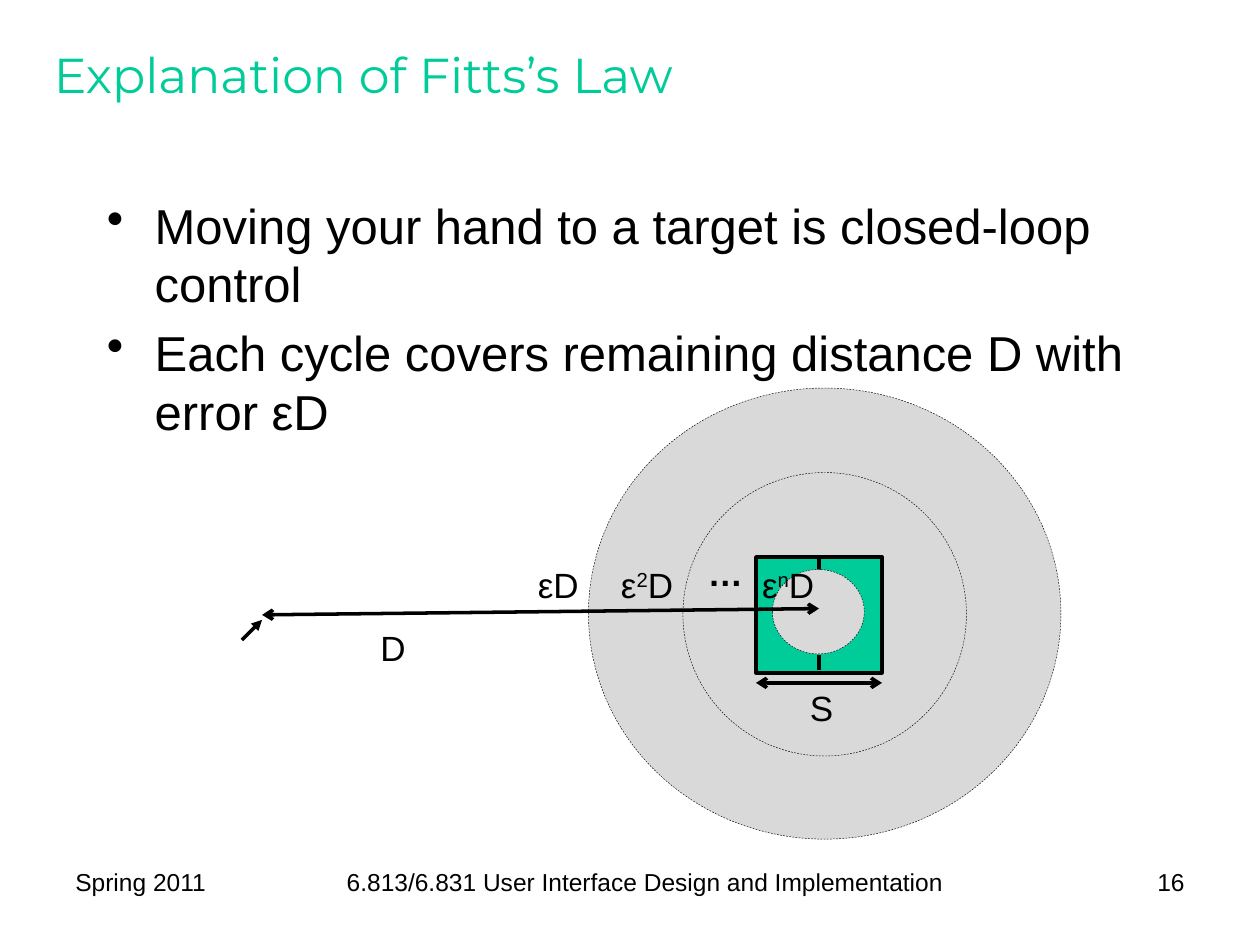
from collections import namedtuple

from lxml import etree
from pptx import Presentation
from pptx.dml.color import RGBColor
from pptx.enum.dml import MSO_LINE
from pptx.enum.shapes import MSO_CONNECTOR, MSO_SHAPE
from pptx.enum.text import MSO_ANCHOR, PP_ALIGN
from pptx.oxml.ns import qn
from pptx.util import Inches, Pt

BLACK, GREEN, GRAY = "000000", "00CC99", "D9D9D9"
Box = namedtuple("Box", "left top width height")


def rgb(color):
    """Turn a hex string into a colour."""
    return RGBColor.from_string(color)


def inside(box, left, top, width, height):
    """Return a box whose offset is measured from another box."""
    return Box(box.left + left, box.top + top, width, height)


def add_text(slide, box, paragraphs, size, color=BLACK, font="Arial",
             align=PP_ALIGN.LEFT, wrap=True, bold=False):
    """Add a text box, where each paragraph is a list of (text, raised) runs."""
    frame = slide.shapes.add_textbox(*map(Inches, box)).text_frame
    frame.word_wrap = wrap
    for index, runs in enumerate(paragraphs):
        paragraph = frame.paragraphs[0] if index == 0 else frame.add_paragraph()
        paragraph.alignment = align
        paragraph.font.name = font
        paragraph.font.size = Pt(size)
        paragraph.font.bold = bold
        paragraph.font.color.rgb = rgb(color)
        for text, raised in runs:
            run = paragraph.add_run()
            run.text = text
            if raised:
                run.font._element.set("baseline", "30000")
    return frame


def add_figure(slide, kind, box, fill, width, dash=None):
    """Add a filled preset shape with a black outline."""
    shape = slide.shapes.add_shape(kind, *map(Inches, box))
    shape.shadow.inherit = False
    shape.fill.solid()
    shape.fill.fore_color.rgb = rgb(fill)
    shape.line.color.rgb = rgb(BLACK)
    shape.line.width = Pt(width)
    shape.line.dash_style = dash


def add_line(slide, box, start, end, head=None, tail=None, dash=None):
    """Add a black line between two points of a box, with optional arrowheads."""
    points = [Inches(origin + offset) for point in (start, end)
              for origin, offset in zip((box.left, box.top), point)]
    connector = slide.shapes.add_connector(MSO_CONNECTOR.STRAIGHT, *points)
    connector.line.color.rgb = rgb(BLACK)
    connector.line.width = Pt(2)
    connector.line.dash_style = dash
    outline = connector.line._get_or_add_ln()
    for name, arrow in (("a:headEnd", head), ("a:tailEnd", tail)):
        if arrow:
            etree.SubElement(outline, qn(name), type=arrow)
    etree.SubElement(connector._element.spPr, qn("a:effectLst"))


def add_title(slide, box):
    """Add the slide title."""
    frame = add_text(slide, box, [[("Explanation of Fitts’s Law", False)]], 28, GREEN, "Montserrat")
    frame.vertical_anchor = MSO_ANCHOR.MIDDLE


def add_bullets(slide, box):
    """Add the bulleted statements."""
    statements = ["Moving your hand to a target is closed-loop control",
                  "Each cycle covers remaining distance D with error εD"]
    frame = add_text(slide, box, [[(text, False)] for text in statements], 28)
    for paragraph in frame.paragraphs:
        paragraph.space_before = Pt(5.6)
        properties = paragraph._p.get_or_add_pPr()
        properties.set("marL", str(Inches(0.38)))
        properties.set("indent", str(-Inches(0.38)))
        bullet = etree.Element(qn("a:buChar"), char="•")
        properties.find(qn("a:defRPr")).addprevious(bullet)


def add_footer(slide, box):
    """Add the date, course name and page number."""
    parts = [(0, 1.5, "Spring 2011", PP_ALIGN.LEFT),
             (1.58, 6.08, "6.813/6.831 User Interface Design and Implementation", PP_ALIGN.CENTER),
             (7.75, 1.25, "16", PP_ALIGN.RIGHT)]
    for left, width, text, align in parts:
        add_text(slide, inside(box, left, 0, width, box.height), [[(text, False)]], 14, align=align)


def add_diagram(slide, box):
    """Add the target, its error circles, the distances and their labels."""
    def circle(*place):
        add_figure(slide, MSO_SHAPE.OVAL, inside(box, *place), GRAY, 0.25, MSO_LINE.DASH)

    circle(2.75, 0, 3.75, 3.58)
    circle(3.5, 0.67, 2.25, 2.25)
    add_line(slide, box, (0, 2), (0.16, 1.84), tail="triangle")
    add_figure(slide, MSO_SHAPE.RECTANGLE, inside(box, 4.08, 1.34, 1, 0.92), GREEN, 2)
    add_line(slide, box, (4.08, 2.34), (5.08, 2.34), "arrow", "arrow")
    add_line(slide, box, (4.58, 1.34), (4.58, 2.25), dash=MSO_LINE.DASH)
    circle(4.21, 1.44, 0.73, 0.67)
    add_line(slide, box, (0.16, 1.8), (4.58, 1.75), "arrow", "arrow")

    labels = [(1, 1.84, 0.4, [("D", False)]),
              (4.41, 2.32, 0.39, [("S", False)]),
              (3.6, 1.25, 0.48, [("…", False)]),
              (2.25, 1.34, 0.53, [("εD", False)]),
              (2.91, 1.34, 0.63, [("ε", False), ("2", True), ("D", False)]),
              (4.03, 1.34, 0.63, [("ε", False), ("n", True), ("D", False)])]
    for left, top, width, runs in labels:
        add_text(slide, inside(box, left, top, width, 0.44), [runs], 20,
                 wrap=False, bold=runs[0][0] == "…")


def main():
    """Build and save the slide."""
    presentation = Presentation()
    presentation.slide_width, presentation.slide_height = Inches(10), Inches(7.5)
    slide = presentation.slides.add_slide(presentation.slide_layouts[6])
    add_title(slide, Box(0.33, 0.17, 9.25, 0.83))
    add_bullets(slide, Box(0.75, 1.5, 8.5, 5.17))
    add_footer(slide, Box(0.5, 6.83, 9, 0.52))
    add_diagram(slide, Box(1.92, 3.08, 6.5, 3.58))
    presentation.save("out.pptx")


if __name__ == "__main__":
    main()
